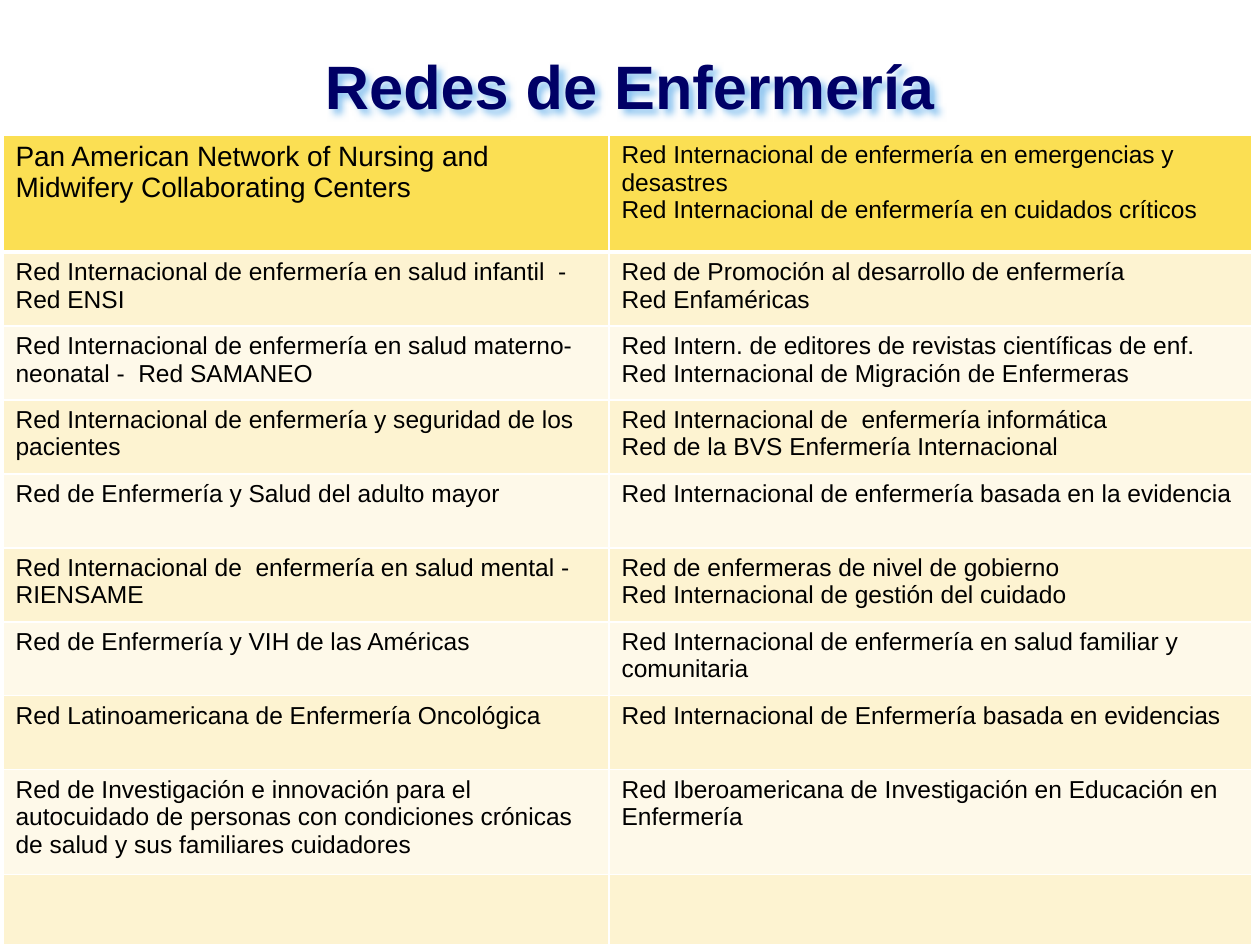
from dataclasses import dataclass

from lxml import etree
from pptx import Presentation
from pptx import util as u
from pptx.dml.color import RGBColor
from pptx.enum import text
from pptx.oxml import parse_xml
from pptx.oxml.ns import nsdecls, qn

EMU_PER_PX = 914400 / 126


def px(length):
    return u.Emu(round(length * EMU_PER_PX))


@dataclass(frozen=True)
class Theme:
    font: str = "Arial"
    title_color: str = "000066"
    title_shadow: str = "8CC4F0"
    text_color: str = "000000"
    border: str = "FFFFFF"
    header_fill: str = "FBDF53"
    band_fills: tuple = ("FDF3D1", "FEF9E9")
    title_size: int = 35
    lead_size: int = 16
    cell_size: int = 14


NETWORKS = [
    ("Pan American Network of Nursing and Midwifery Collaborating Centers",
     "Red Internacional de enfermería en emergencias y desastres\n"
     "Red Internacional de enfermería en cuidados críticos"),
    ("Red Internacional de enfermería en salud infantil  - Red ENSI",
     "Red de Promoción al desarrollo de enfermería\nRed Enfaméricas"),
    ("Red Internacional de enfermería en salud materno-neonatal -  Red SAMANEO",
     "Red Intern. de editores de revistas científicas de enf.\n"
     "Red Internacional de Migración de Enfermeras"),
    ("Red Internacional de enfermería y seguridad de los pacientes",
     "Red Internacional de  enfermería informática\n"
     "Red de la BVS Enfermería Internacional"),
    ("Red de Enfermería y Salud del adulto mayor",
     "Red Internacional de enfermería basada en la evidencia"),
    ("Red Internacional de  enfermería en salud mental - RIENSAME",
     "Red de enfermeras de nivel de gobierno\n"
     "Red Internacional de gestión del cuidado"),
    ("Red de Enfermería y VIH de las Américas",
     "Red Internacional de enfermería en salud familiar y comunitaria"),
    ("Red Latinoamericana de Enfermería Oncológica",
     "Red Internacional de Enfermería basada en evidencias"),
    ("Red de Investigación e innovación para el autocuidado de personas con "
     "condiciones crónicas de salud y sus familiares cuidadores",
     "Red Iberoamericana de Investigación en Educación en Enfermería"),
    ("", ""),
]
COLUMN_WIDTHS = [606, 643]
ROW_HEIGHTS = [117] + [74] * 7 + [105, 70]


def write(frame, content, *, font, size, color, bold=False,
          align=text.PP_ALIGN.LEFT):
    """Fill a text frame, one paragraph per line of content."""
    for index, line in enumerate(content.split("\n")):
        paragraph = frame.paragraphs[0] if index == 0 else frame.add_paragraph()
        paragraph.alignment = align
        run = paragraph.add_run()
        run.text = line
        run.font.name = font
        run.font.size = u.Pt(size)
        run.font.bold = bold
        run.font.color.rgb = RGBColor.from_string(color)


class SlideBuilder:
    def __init__(self, slide, theme):
        self.slide = slide
        self.theme = theme

    def title(self, content, left, top, width, height):
        theme = self.theme
        shape = self.slide.shapes.title
        shape.left, shape.top = px(left), px(top)
        shape.width, shape.height = px(width), px(height)
        frame = shape.text_frame
        frame.margin_left = frame.margin_right = 0
        frame.margin_top = frame.margin_bottom = 0
        frame.vertical_anchor = text.MSO_ANCHOR.MIDDLE
        frame.word_wrap = True
        frame.auto_size = text.MSO_AUTO_SIZE.NONE
        write(frame, content, font=theme.font, size=theme.title_size,
              color=theme.title_color, bold=True, align=text.PP_ALIGN.CENTER)
        shape.element.spPr.append(parse_xml(
            f'<a:effectLst {nsdecls("a")}>'
            '<a:outerShdw blurRad="50800" dist="38100" dir="2700000">'
            f'<a:srgbClr val="{theme.title_shadow}"/>'
            '</a:outerShdw></a:effectLst>'))

    def table(self, rows, left, top, column_widths, row_heights):
        theme = self.theme
        table = self.slide.shapes.add_table(
            len(rows), len(column_widths), px(left), px(top),
            px(sum(column_widths)), px(sum(row_heights))).table
        for column, width in zip(table.columns, column_widths):
            column.width = px(width)
        for row, height in zip(table.rows, row_heights):
            row.height = px(height)
        for i, contents in enumerate(rows):
            fill = theme.band_fills[(i - 1) % 2] if i else theme.header_fill
            for j, content in enumerate(contents):
                cell = table.cell(i, j)
                self.cell_borders(cell, top=3 if i == 1 else 1,
                                  bottom=3 if i == 0 else 1)
                cell.fill.solid()
                cell.fill.fore_color.rgb = RGBColor.from_string(fill)
                if content:
                    size = theme.lead_size if i == j == 0 else theme.cell_size
                    write(cell.text_frame, content, font=theme.font,
                          size=size, color=theme.text_color)

    def cell_borders(self, cell, top, bottom):
        properties = cell._tc.get_or_add_tcPr()
        for side, points in (("L", 1), ("R", 1), ("T", top), ("B", bottom)):
            line = etree.SubElement(properties, qn(f"a:ln{side}"),
                                    w=str(u.Pt(points)))
            fill = etree.SubElement(line, qn("a:solidFill"))
            etree.SubElement(fill, qn("a:srgbClr"), val=self.theme.border)


def main():
    presentation = Presentation()
    presentation.slide_width, presentation.slide_height = px(1260), px(945)
    slide = presentation.slides.add_slide(presentation.slide_layouts[5])
    builder = SlideBuilder(slide, Theme())
    builder.title("Redes de Enfermería", 0, 0, 1260, 170)
    builder.table(NETWORKS, 3, 135, COLUMN_WIDTHS, ROW_HEIGHTS)
    presentation.save("out.pptx")


if __name__ == "__main__":
    main()
